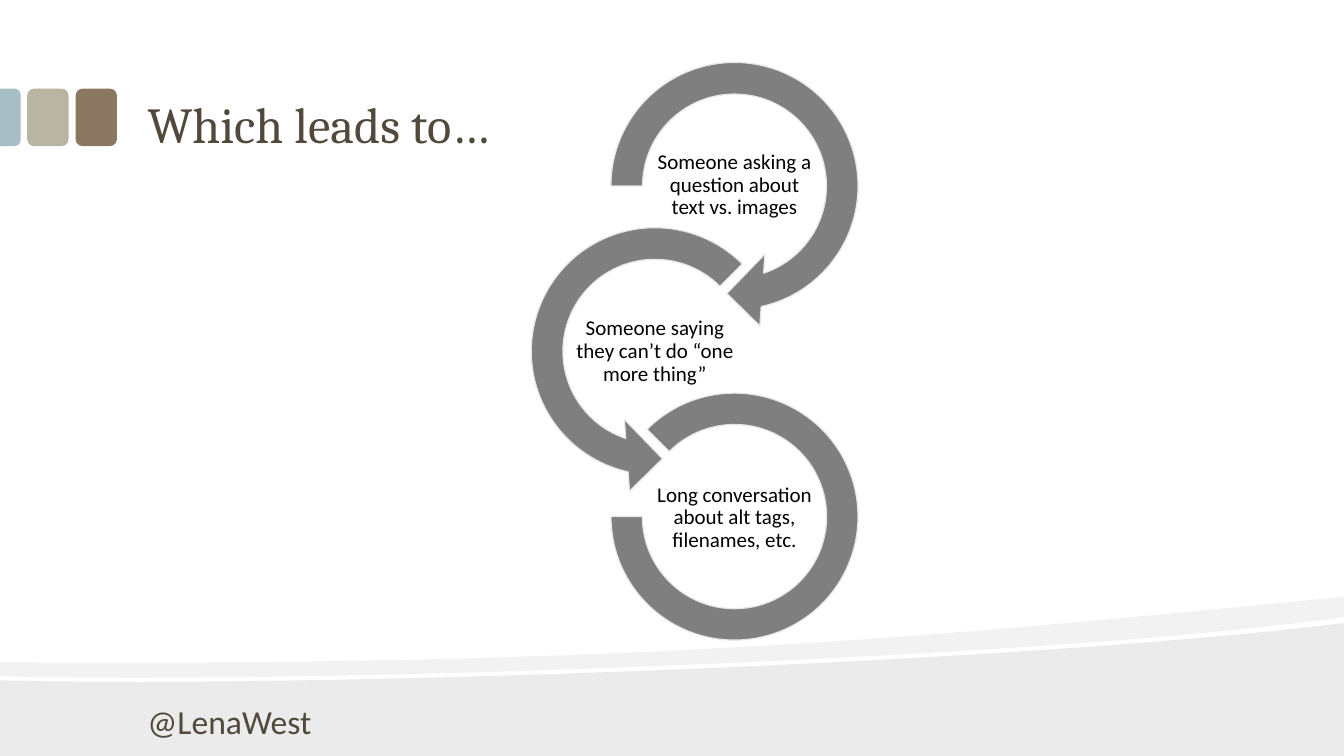
import pptx
import pptx.dml.color
import pptx.enum.shapes
import pptx.enum.text
import pptx.util
import lxml.etree

Inches = pptx.util.Inches
Pt = pptx.util.Pt
qn = pptx.oxml.ns.qn
SHAPE = pptx.enum.shapes.MSO_SHAPE
ANCHOR = pptx.enum.text.MSO_ANCHOR
ALIGN = pptx.enum.text.PP_ALIGN
W, H = 13.33, 7.5
BROWN = "52493D"


def color(value):
    return pptx.dml.color.RGBColor.from_string(value)


def paint(sp, fill, line=None, width=0.85, alpha=None):
    sp.shadow.inherit = False
    sp.fill.solid()
    sp.fill.fore_color.rgb = color(fill)
    if alpha:
        clr = sp._element.spPr.find(".//" + qn("a:srgbClr"))
        node = lxml.etree.SubElement(clr, qn("a:alpha"))
        node.set("val", str(alpha * 1000))
    if line:
        sp.line.color.rgb = color(line)
        sp.line.width = Pt(width)
    else:
        sp.line.fill.background()


def add_shape(s, kind, box, fill, line=None, adj=(), rot=0):
    sp = s.shapes.add_shape(kind, *map(Inches, box))
    for i, value in enumerate(adj):
        sp.adjustments[i] = value
    sp.rotation = rot
    paint(sp, fill, line)


def add_text(s, box, text, size, font, ink, anchor, inset, align=ALIGN.LEFT, spacing=1.0):
    tf = s.shapes.add_textbox(*map(Inches, box)).text_frame
    tf.word_wrap = True
    tf.vertical_anchor = anchor
    tf.margin_left = tf.margin_right = Inches(inset[0])
    tf.margin_top = tf.margin_bottom = Inches(inset[1])
    p = tf.paragraphs[0]
    p.alignment = align
    p.line_spacing = spacing
    r = p.add_run()
    r.text = text
    r.font.size = Pt(size)
    r.font.name = font
    r.font.color.rgb = color(ink)


def add_wave(s, points, curve_starts, alpha):
    grid = [(round(x * 100), round(y * 100)) for x, y in points]
    fb = s.shapes.build_freeform(*grid[0], scale=Inches(0.01))
    fb.add_line_segments(grid[1:], close=True)
    sp = fb.convert_to_shape()
    outline = sp._element.spPr.find(".//" + qn("a:path"))
    segments = list(outline)
    for start in curve_starts:
        bezier = lxml.etree.Element(qn("a:cubicBezTo"))
        segments[start].addprevious(bezier)
        for segment in segments[start:start + 3]:
            bezier.append(segment[0])
            outline.remove(segment)
    paint(sp, "000000", alpha=alpha)


def add_waves(s):
    add_wave(s, [(W, 6.18), (W, H), (0, H), (0, 6.75),
                 (3.52, 6.83), (10.42, 6.55), (W, 6.18)], [4], 8)
    add_wave(s, [(W, 5.92), (W, 6.12),
                 (12.55, 6.23), (11.49, 6.33), (10.29, 6.41),
                 (6.98, 6.63), (2.58, 6.77), (0, 6.71), (0, 6.57),
                 (6.52, 6.62), (9.71, 6.27), (W, 5.92)], [2, 5, 9], 5)


def add_tabs(s, top, width, height):
    for left, fill in ((0.75, "8A7863"), (0.27, "B8B6A3")):
        add_shape(s, SHAPE.ROUNDED_RECTANGLE, (left, top, width, height), fill)
    half = width / 2
    box = ((half - height) / 2, top + (height - half) / 2, height, half)
    add_shape(s, SHAPE.ROUND_2_SAME_RECTANGLE, box, "A7BEC4", adj=(0.292, 0), rot=90)


def add_cycle(s, left, top):
    pitch, shift, arrow, ring = 1.64, 0.79, 2.85, 2.45
    steps = (
        (SHAPE.CIRCULAR_ARROW, shift, arrow, (0.11, 11.423, 45, 108, 0.125),
         "Someone asking a question about text vs. images"),
        (SHAPE.LEFT_CIRCULAR_ARROW, 0, arrow, (0.11, 11.423, 63, 189, 0.125),
         "Someone saying they can’t do “one more thing”"),
        (SHAPE.BLOCK_ARC, shift, ring, (135, 108, 0.127),
         "Long conversation about alt tags, filenames, etc."),
    )
    for i, (kind, dx, size, adj, text) in enumerate(steps):
        cx = left + dx + arrow / 2
        cy = top + i * pitch + arrow / 2
        add_shape(s, kind, (cx - size / 2, cy - size / 2, size, size), "7F7F7F", "E6E6E6", adj)
        add_text(s, (cx - 0.79, cy - 0.4 + i * 0.01, 1.58, 0.79), text, 15, "Calibri", "000000",
                 ANCHOR.MIDDLE, (0.01, 0.01), ALIGN.CENTER, 0.9)


def add_labels(s, left):
    inset = (0.13, 0.07)
    add_text(s, (left, 0.17, 0.8 * W, 1.42), "Which leads to…", 36, "Cambria", BROWN,
             ANCHOR.BOTTOM, inset)
    add_text(s, (left, 7.05, 0.68 * W, 0.2), "@LenaWest", 24, "Calibri", BROWN,
             ANCHOR.MIDDLE, inset)


def main():
    prs = pptx.Presentation()
    prs.slide_width = Inches(W)
    prs.slide_height = Inches(H)
    s = prs.slides.add_slide(prs.slide_layouts[6])
    add_waves(s)
    add_tabs(s, 0.88, 0.41, 0.57)
    add_cycle(s, 5.07, 0.42)
    add_labels(s, 0.1 * W)
    prs.save("out.pptx")


if __name__ == "__main__":
    main()
